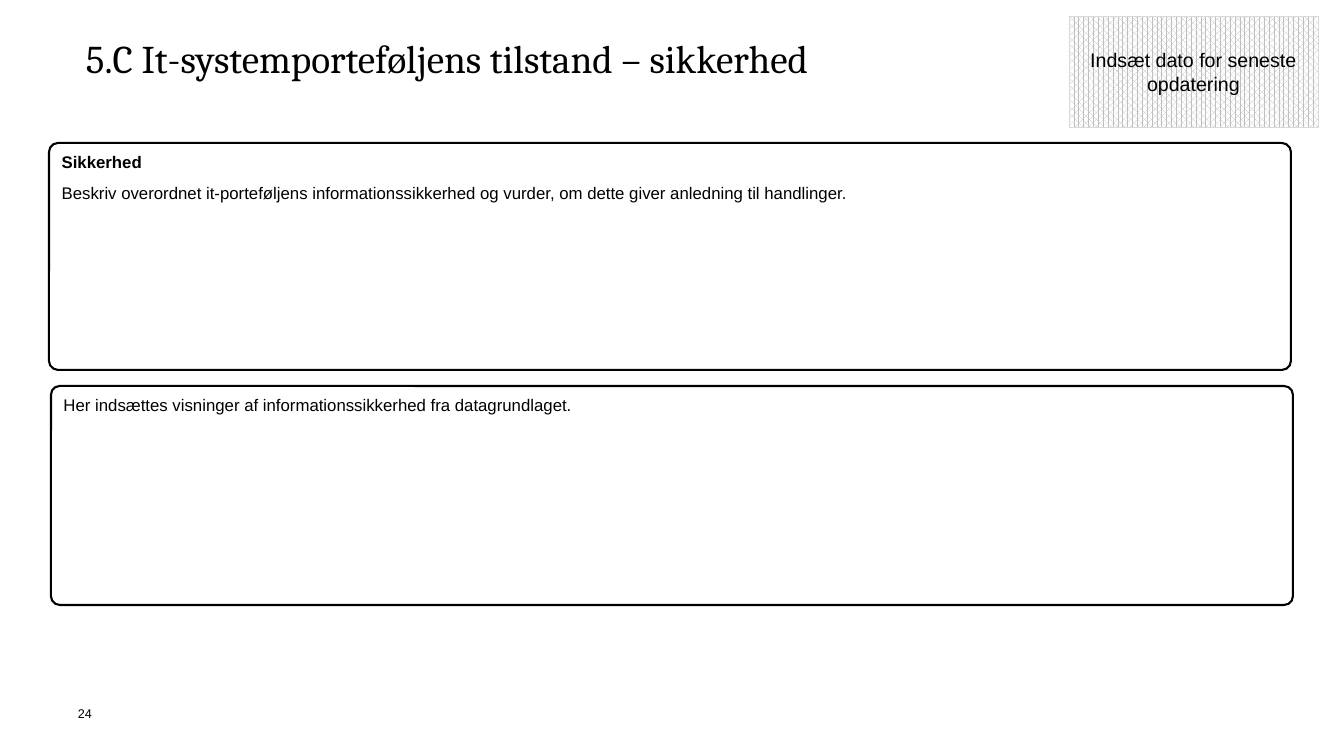
"""Build the slide on the security state of the IT system portfolio."""
from pptx import Presentation
from pptx import util as u
from pptx.dml.color import RGBColor
from pptx.enum import dml, shapes, text

PX = 914400 / 100.8
BLACK = RGBColor(0x00, 0x00, 0x00)
WHITE = RGBColor(0xFF, 0xFF, 0xFF)
HATCH_GREY = RGBColor(0xBF, 0xBF, 0xBF)
EDGE_GREY = RGBColor(0xD9, 0xD9, 0xD9)


def px(length):
    return u.Emu(round(length * PX))


def write(box, lines, size, font="Arial", bold_first=False, align=text.PP_ALIGN.LEFT,
          anchor=text.MSO_ANCHOR.TOP, insets=(10, 5), spacing=1.0, gap=0):
    frame = box.text_frame
    frame.word_wrap = True
    frame.vertical_anchor = anchor
    frame.margin_left = frame.margin_right = px(insets[0])
    frame.margin_top = frame.margin_bottom = px(insets[1])
    for index, line in enumerate(lines):
        para = frame.add_paragraph() if index else frame.paragraphs[0]
        para.alignment = align
        para.line_spacing = spacing
        if index:
            para.space_before = u.Pt(gap)
        span = para.add_run()
        span.text = line
        span.font.name = font
        span.font.size = u.Pt(size)
        span.font.bold = bold_first and index == 0
        span.font.color.rgb = BLACK


def add_label(page, left, top, width, height, line, size, **style):
    box = page.shapes.add_textbox(px(left), px(top), px(width), px(height))
    write(box, [line], size, insets=(0, 0), **style)


def add_outlined(page, kind, left, top, width, height, color, weight):
    box = page.shapes.add_shape(kind, px(left), px(top), px(width), px(height))
    box.shadow.inherit = False
    box.fill.background()
    box.line.color.rgb = color
    box.line.width = u.Pt(weight)
    return box


def add_panel(page, left, top, height, lines, **style):
    box = add_outlined(page, shapes.MSO_SHAPE.ROUNDED_RECTANGLE,
                       left, top, 1242, height, BLACK, 1.5)
    box.adjustments[0] = 0.04
    write(box, lines, 12, spacing=1.08, gap=6.5, **style)


def add_date_stamp(page, line):
    box = add_outlined(page, shapes.MSO_SHAPE.RECTANGLE, 1069, 16, 249, 111, EDGE_GREY, 0.5)
    box.fill.patterned()
    box.fill.pattern = dml.MSO_PATTERN.PERCENT_70
    box.fill.fore_color.rgb = HATCH_GREY
    box.fill.back_color.rgb = WHITE
    write(box, [line], 14, align=text.PP_ALIGN.CENTER, anchor=text.MSO_ANCHOR.MIDDLE)


def main():
    deck = Presentation()
    deck.slide_width, deck.slide_height = px(1344), px(756)
    page = deck.slides.add_slide(deck.slide_layouts[6])
    add_label(page, 78, 706, 31, 30, "24", 9)
    add_label(page, 86, 40, 970, 103, "5.C It-systemporteføljens tilstand – sikkerhed", 28,
              font="Cambria", spacing=0.9)
    add_panel(page, 49, 143, 227, [
        "Sikkerhed",
        "Beskriv overordnet it-porteføljens informationssikkerhed og vurder, "
        "om dette giver anledning til handlinger.",
    ], bold_first=True)
    add_panel(page, 51, 386, 219, [
        "Her indsættes visninger af informationssikkerhed fra datagrundlaget.",
    ])
    add_date_stamp(page, "Indsæt dato for seneste opdatering")
    deck.save("out.pptx")


if __name__ == "__main__":
    main()
